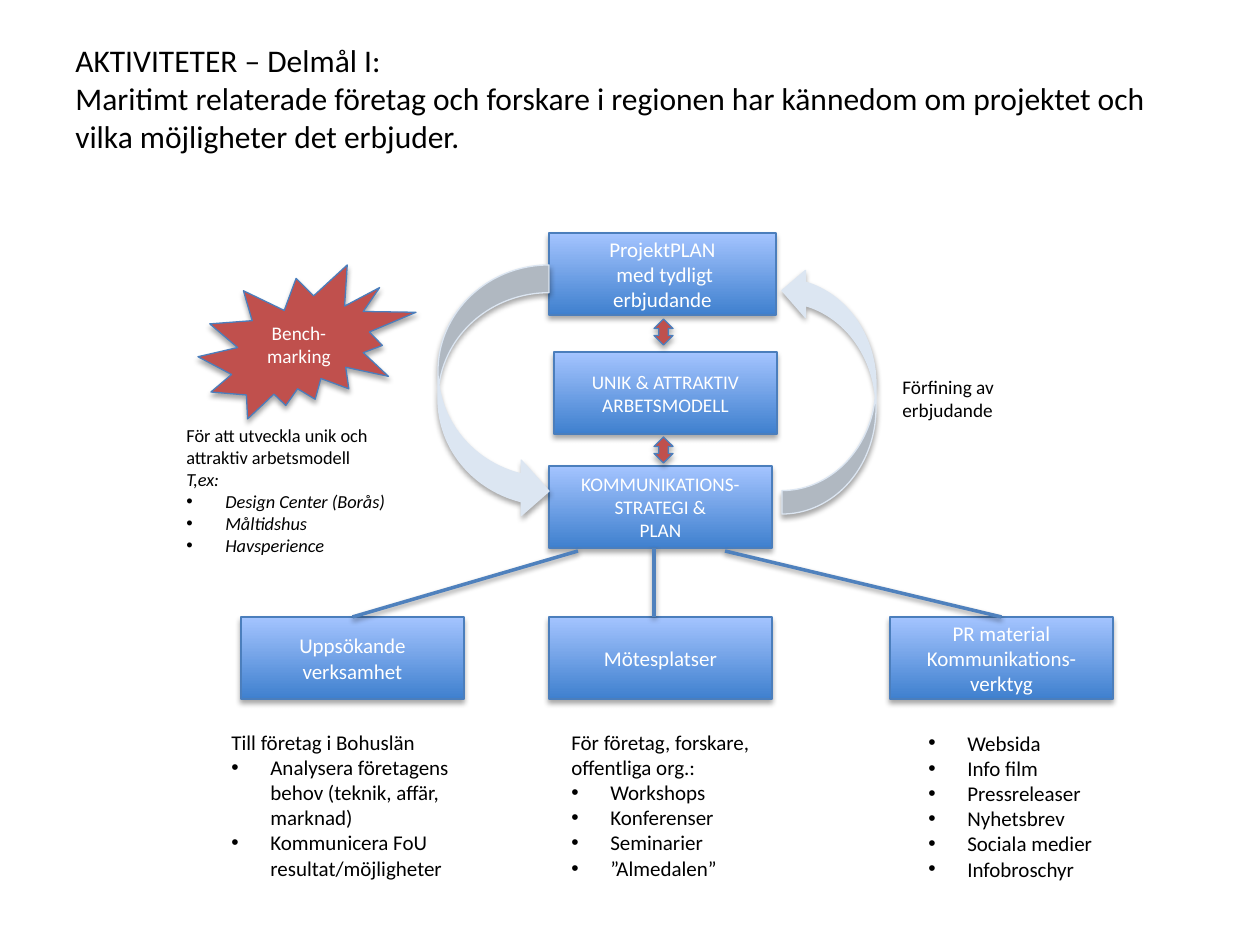
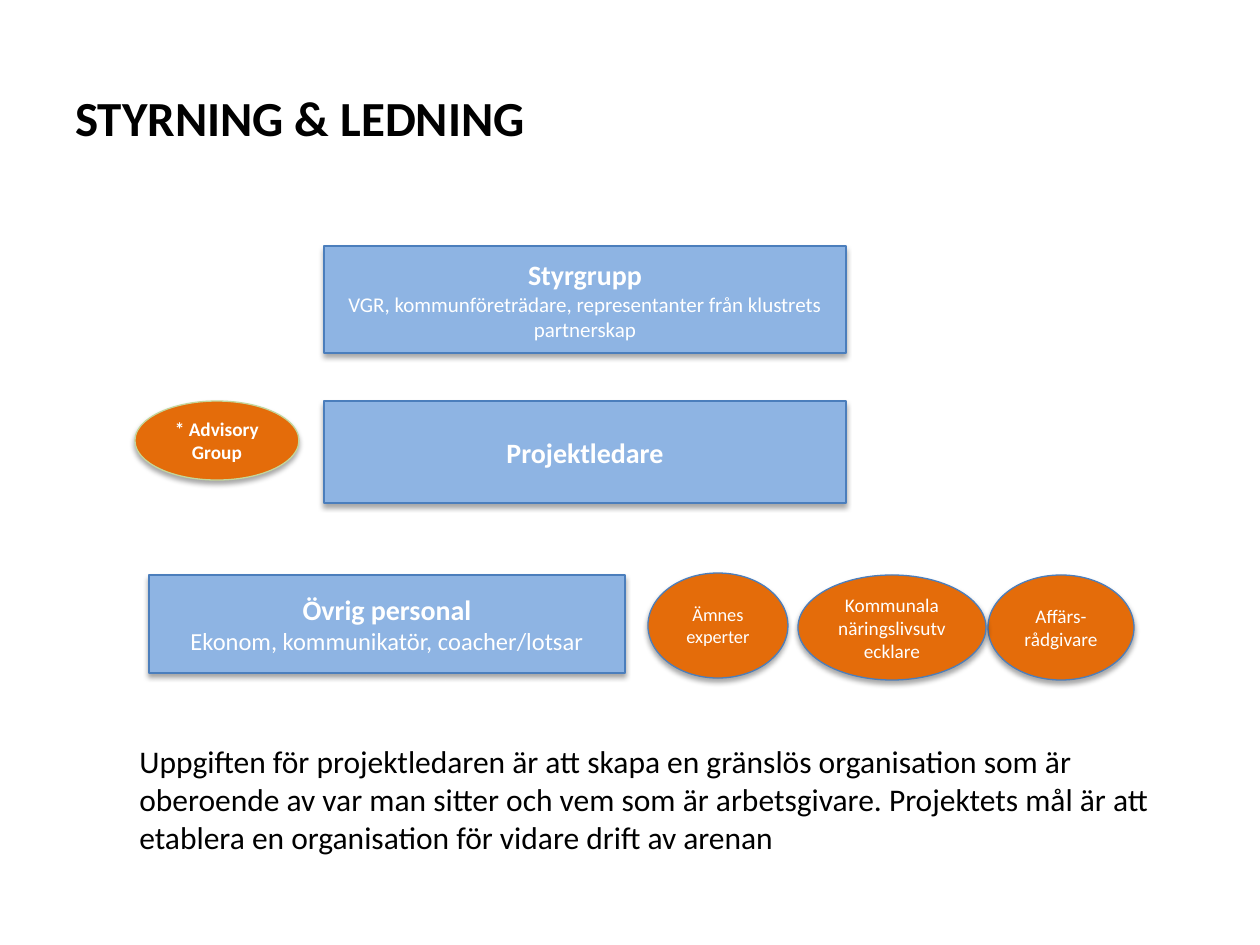
import dataclasses

import lxml.etree
import pptx
import pptx.dml.color
import pptx.enum.shapes
import pptx.enum.text
import pptx.oxml.ns
import pptx.util

SHAPE = pptx.enum.shapes.MSO_SHAPE
ALIGN = pptx.enum.text.PP_ALIGN
ANCHOR = pptx.enum.text.MSO_ANCHOR
EMU_PER_PX = 914400 / 126


@dataclasses.dataclass(frozen=True)
class Theme:
    font: str = "Calibri"
    ink: str = "000000"
    light: str = "FFFFFF"
    outline: str = "4B7EBC"
    link: str = "4F81BD"
    gradient: tuple = ("3F80CE", "A4C4FF")
    red: str = "C0504D"
    pale: str = "DCE6F2"
    blue: str = "8EB4E3"
    orange: str = "E46C0A"
    green: str = "C3D69B"
    title: float = 28
    lead: float = 18
    heading: float = 16
    detail: float = 14
    body: float = 12
    small: float = 11
    fine: float = 10.5
    indent: int = 39
    shape_line: float = 0.75
    link_line: float = 2


THEME = Theme()


def px(value):
    return pptx.util.Emu(round(value * EMU_PER_PX))


def rgb(value):
    return pptx.dml.color.RGBColor.from_string(value)


def sub(parent, tag, **values):
    """Append a drawing element with the given attributes."""
    element = lxml.etree.SubElement(parent, pptx.oxml.ns.qn(tag))
    for name, value in values.items():
        element.set(name, str(value))
    return element


def bullets(*texts, **style):
    return [(text, {"bullet": True, **style}) for text in texts]


def add_shadow(item, opacity=35, distance=1.8):
    """Cast a soft shadow downwards; call after fill and line are set."""
    effects = sub(item._element.spPr, "a:effectLst")
    shadow = sub(effects, "a:outerShdw", blurRad=pptx.util.Pt(3.1),
                 dist=pptx.util.Pt(distance), dir=90 * 60000, rotWithShape=0)
    color = sub(shadow, "a:srgbClr", val="000000")
    sub(color, "a:alpha", val=opacity * 1000)


def set_bullet(para):
    properties = para._p.get_or_add_pPr()
    properties.set("marL", str(px(THEME.indent)))
    properties.set("indent", str(-px(THEME.indent)))
    sub(properties, "a:buFont", typeface="Arial")
    sub(properties, "a:buChar", char="•")


def write(box, paragraphs, size, color, align, anchor):
    """Fill a box with paragraphs, each a text or a (text, style) pair."""
    frame = box.text_frame
    frame.word_wrap = True
    frame.vertical_anchor = anchor
    for index, entry in enumerate(paragraphs):
        text, style = (entry, {}) if isinstance(entry, str) else entry
        style = {"name": THEME.font, "size": size, **style}
        para = frame.paragraphs[0] if index == 0 else frame.add_paragraph()
        para.alignment = align
        if style.pop("bullet", False):
            set_bullet(para)
        style["size"] = pptx.util.Pt(style["size"])
        span = para.add_run()
        span.text = text
        span.font.color.rgb = rgb(color)
        for name, value in style.items():
            setattr(span.font, name, value)


def add_text(page, place, paragraphs, size, anchor=ANCHOR.TOP):
    box = page.shapes.add_textbox(*map(px, place))
    write(box, paragraphs, size, THEME.ink, ALIGN.LEFT, anchor)


def add_title(page, paragraphs, size, height):
    add_text(page, (63, 38, 1134, height), paragraphs, size, ANCHOR.MIDDLE)


def add_block(page, kind, place, fill, paragraphs=(), size=THEME.small,
              outline=THEME.outline):
    """Shadowed preset shape; a pair of colours as fill gives a gradient."""
    box = page.shapes.add_shape(kind, *map(px, place))
    if isinstance(fill, tuple):
        box.fill.gradient()
        box.fill.gradient_angle = 90
        for stop, color in zip(box.fill.gradient_stops, fill):
            stop.color.rgb = rgb(color)
    else:
        box.fill.solid()
        box.fill.fore_color.rgb = rgb(fill)
    box.line.color.rgb = rgb(outline)
    box.line.width = pptx.util.Pt(THEME.shape_line)
    add_shadow(box)
    write(box, paragraphs, size, THEME.light, ALIGN.CENTER, ANCHOR.MIDDLE)
    return box


def add_step(page, left, top, paragraphs, size=THEME.body, width=223):
    return add_block(page, SHAPE.RECTANGLE, (left, top, width, 82),
                     THEME.gradient, paragraphs, size)


def add_link(page, start, end, target=None):
    """Line from start to end, joined to the top of target if there is one."""
    line = page.shapes.add_connector(
        pptx.enum.shapes.MSO_CONNECTOR.STRAIGHT, *map(px, start + end))
    if target is not None:
        line.end_connect(target, 0)
    line.line.color.rgb = rgb(THEME.link)
    line.line.width = pptx.util.Pt(THEME.link_line)
    add_shadow(line, opacity=38, distance=1.6)


def build_activities(page):
    add_title(page, [
        "AKTIVITETER – Delmål I:",
        "Maritimt relaterade företag och forskare i regionen har kännedom "
        "om projektet och vilka möjligheter det erbjuder.",
    ], THEME.lead, 120)

    # Central chain from plan to communication
    add_step(page, 549, 233, ["ProjektPLAN", " med tydligt erbjudande"],
             width=227)
    add_step(page, 549, 466, ["KOMMUNIKATIONS-STRATEGI &", "PLAN"],
             THEME.small)
    add_step(page, 554, 352, ["UNIK & ATTRAKTIV", "ARBETSMODELL"],
             THEME.small)
    for top in (319, 437):
        add_block(page, SHAPE.UP_DOWN_ARROW, (654, top, 19, 26), THEME.red)

    # Refinement loop
    for place, rotation in (((782, 267, 94, 247), 180),
                            ((438, 265, 111, 254), 0)):
        arrow = add_block(page, SHAPE.CURVED_RIGHT_ARROW, place, THEME.pale,
                          outline=THEME.pale)
        arrow.rotation = rotation
    add_text(page, (890, 369, 134, 59), ["Förfining av erbjudande"],
             THEME.small)

    # Three channels below the chain
    channel_top = 617
    outreach = add_step(page, 241, channel_top, ["Uppsökande verksamhet"])
    add_step(page, 549, channel_top, ["Mötesplatser"])
    material = add_step(page, 890, channel_top,
                        ["PR material", "Kommunikations-verktyg"])
    add_link(page, (578, 551), (352, channel_top), outreach)
    add_link(page, (654, 548), (654, channel_top))
    add_link(page, (725, 551), (1001, channel_top), material)

    # What each channel holds
    add_text(page, (219, 723, 248, 190), [
        "Till företag i Bohuslän",
        *bullets("Analysera företagens behov (teknik, affär, marknad)",
                 "Kommunicera FoU resultat/möjligheter"),
    ], THEME.body)
    add_text(page, (559, 723, 229, 190), [
        "För företag, forskare, offentliga org.:",
        *bullets("Workshops", "Konferenser", "Seminarier", "”Almedalen”"),
    ], THEME.body)
    add_text(page, (916, 724, 192, 165), bullets(
        "Websida", "Info film", "Pressreleaser", "Nyhetsbrev",
        "Sociala medier", "Infobroschyr"), THEME.body)

    # Benchmarking
    add_block(page, SHAPE.EXPLOSION2, (198, 265, 218, 154), THEME.red,
              ["Bench-marking"])
    add_text(page, (174, 418, 265, 146), [
        "För att utveckla unik och attraktiv arbetsmodell",
        ("T,ex:", {"italic": True}),
        *bullets("Design Center (Borås)", "Måltidshus", "Havsperience",
                 italic=True),
    ], THEME.fine)


def build_governance(page):
    bold = {"bold": True}
    add_title(page, [("STYRNING & LEDNING", bold)], THEME.title, 157)

    # Levels of the organisation
    levels = [
        ((324, 246, 522, 107), "Styrgrupp",
         [("VGR, kommunföreträdare, representanter från klustrets partnerskap",
           {"size": THEME.body})]),
        ((324, 401, 522, 102), "Projektledare", []),
        ((149, 575, 476, 98), "Övrig personal",
         [("Ekonom, kommunikatör, coacher/lotsar", {"size": THEME.detail})]),
    ]
    for place, heading, details in levels:
        add_block(page, SHAPE.RECTANGLE, place, THEME.blue,
                  [(heading, bold), *details], THEME.heading)

    # Advisers and experts
    advisers = [
        ((135, 401, 164, 79), [("* Advisory", bold), ("Group", bold)],
         THEME.small, THEME.green),
        ((988, 575, 146, 105), ["Affärs-rådgivare"],
         THEME.small, THEME.outline),
        ((648, 573, 140, 105), ["Ämnes", "experter"],
         THEME.fine, THEME.outline),
        ((798, 575, 188, 105), ["Kommunala näringslivsutvecklare"],
         THEME.small, THEME.outline),
    ]
    for place, paragraphs, size, outline in advisers:
        add_block(page, SHAPE.OVAL, place, THEME.orange, paragraphs, size,
                  outline)

    # Task of the project leader
    add_text(page, (127, 736, 1070, 165), [
        "Uppgiften för projektledaren är att skapa en gränslös organisation "
        "som är oberoende av var man sitter och vem som är arbetsgivare. "
        "Projektets mål är att etablera en organisation för vidare drift av "
        "arenan"], THEME.lead)


def main():
    deck = pptx.Presentation()
    deck.slide_width, deck.slide_height = px(1260), px(945)
    for build in (build_activities, build_governance):
        build(deck.slides.add_slide(deck.slide_layouts[6]))
    deck.save("out.pptx")


if __name__ == "__main__":
    main()
